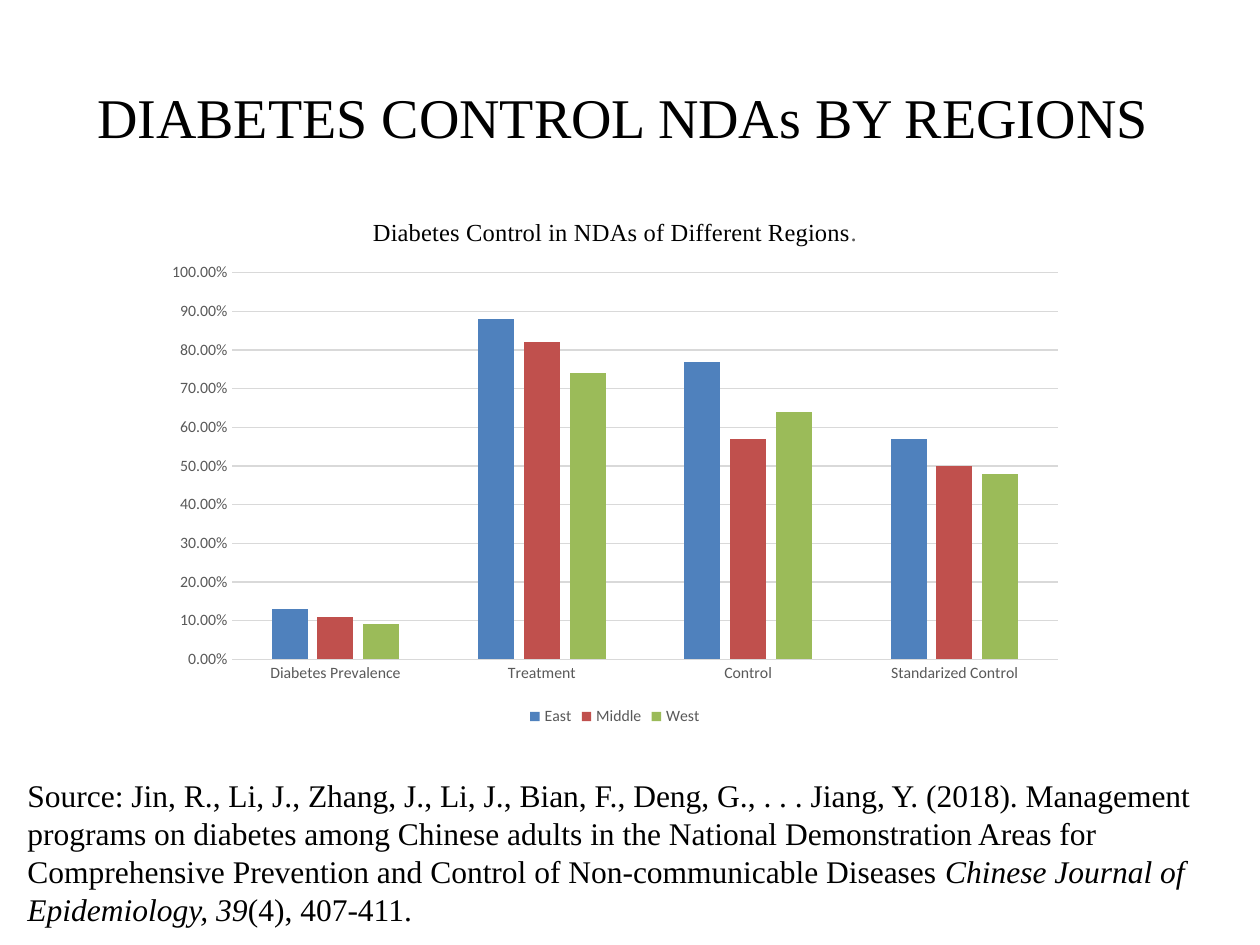
from dataclasses import dataclass

from pptx import Presentation
from pptx.chart.data import CategoryChartData
from pptx.dml.color import RGBColor
from pptx.enum.chart import XL_CHART_TYPE, XL_LEGEND_POSITION, XL_TICK_MARK
from pptx.enum.text import MSO_ANCHOR, PP_ALIGN
from pptx.util import Pt


@dataclass(frozen=True)
class Theme:
    serif: str = "Times New Roman"
    sans: str = "Calibri"
    text: RGBColor = RGBColor(0, 0, 0)
    muted: RGBColor = RGBColor(0x59, 0x59, 0x59)
    rule: RGBColor = RGBColor(0xD9, 0xD9, 0xD9)
    bars: tuple = ("4F81BD", "C0504D", "9BBB59")
    title_size: int = 32
    source_size: int = 18
    chart_title_size: int = 14
    chart_size: int = 10
    label_size: int = 9


THEME = Theme()

CATEGORIES = ("Diabetes Prevalence", "Treatment", "Control", "Standarized Control")
REGIONS = {
    "East": (0.13, 0.88, 0.77, 0.57),
    "Middle": (0.11, 0.82, 0.57, 0.5),
    "West": (0.09, 0.74, 0.64, 0.48),
}
SOURCE = (
    ("Source: Jin, R., Li, J., Zhang, J., Li, J., Bian, F., Deng, G., . . . Jiang, Y. "
     "(2018). Management programs on diabetes among Chinese adults in the National "
     "Demonstration Areas for Comprehensive Prevention and Control of "
     "Non-communicable Diseases ", False),
    ("Chinese Journal of Epidemiology, 39", True),
    ("(4), 407-411.", False),
)


def set_font(font, name, size, color):
    font.name, font.size, font.bold = name, Pt(size), False
    font.color.rgb = color


def add_text(s, box, runs, size, align=PP_ALIGN.LEFT, anchor=MSO_ANCHOR.TOP):
    tf = s.shapes.add_textbox(*map(Pt, box)).text_frame
    tf.word_wrap = True
    tf.vertical_anchor = anchor
    p = tf.paragraphs[0]
    p.alignment = align
    set_font(p.font, THEME.serif, size, THEME.text)
    for text, italic in runs:
        r = p.add_run()
        r.text = text
        r.font.italic = italic


def style_axis(axis):
    axis.major_tick_mark = axis.minor_tick_mark = XL_TICK_MARK.NONE
    set_font(axis.tick_labels.font, THEME.sans, THEME.label_size, THEME.muted)


def style_line(line):
    line.color.rgb = THEME.rule
    line.width = Pt(0.75)


def add_chart_title(chart):
    p = chart.chart_title.text_frame.paragraphs[0]
    parts = (("Diabetes Control in NDAs of Different Regions", THEME.text),
             (".", THEME.muted))
    for text, color in parts:
        r = p.add_run()
        r.text = text
        set_font(r.font, THEME.serif, THEME.chart_title_size, color)
    chart.chart_title.include_in_layout = False


def add_region_chart(s, box):
    data = CategoryChartData(number_format="0.00%")
    data.categories = CATEGORIES
    for region, values in REGIONS.items():
        data.add_series(region, values)
    chart = s.shapes.add_chart(
        XL_CHART_TYPE.COLUMN_CLUSTERED, *map(Pt, box), data).chart
    set_font(chart.font, THEME.sans, THEME.chart_size, THEME.text)
    add_chart_title(chart)

    # Bars
    plot = chart.plots[0]
    plot.vary_by_categories = False
    plot.gap_width, plot.overlap = 219, -27
    for series, color in zip(plot.series, THEME.bars):
        series.format.fill.solid()
        series.format.fill.fore_color.rgb = RGBColor.from_string(color)

    # Axes
    style_axis(chart.category_axis)
    style_line(chart.category_axis.format.line)
    axis = chart.value_axis
    style_axis(axis)
    axis.minimum_scale, axis.maximum_scale, axis.major_unit = 0, 1, 0.1
    axis.tick_labels.number_format = "0.00%"
    axis.tick_labels.number_format_is_linked = False
    axis.format.line.fill.background()
    style_line(axis.major_gridlines.format.line)

    # Legend
    chart.has_legend = True
    chart.legend.position = XL_LEGEND_POSITION.BOTTOM
    chart.legend.include_in_layout = False
    set_font(chart.legend.font, THEME.sans, THEME.label_size, THEME.muted)


def main():
    prs = Presentation()
    prs.slide_width, prs.slide_height = Pt(720), Pt(540)
    s = prs.slides.add_slide(prs.slide_layouts[6])

    # Heading
    add_text(s, (0, 21.6, 720, 90), [("DIABETES CONTROL NDAs BY REGIONS ", False)],
             THEME.title_size, PP_ALIGN.CENTER, MSO_ANCHOR.MIDDLE)
    # Source note
    add_text(s, (8.64, 440, 702.72, 116.64), SOURCE, THEME.source_size)
    # Chart
    add_region_chart(s, (87.84, 111.6, 527.04, 306))

    prs.save("out.pptx")


if __name__ == "__main__":
    main()
